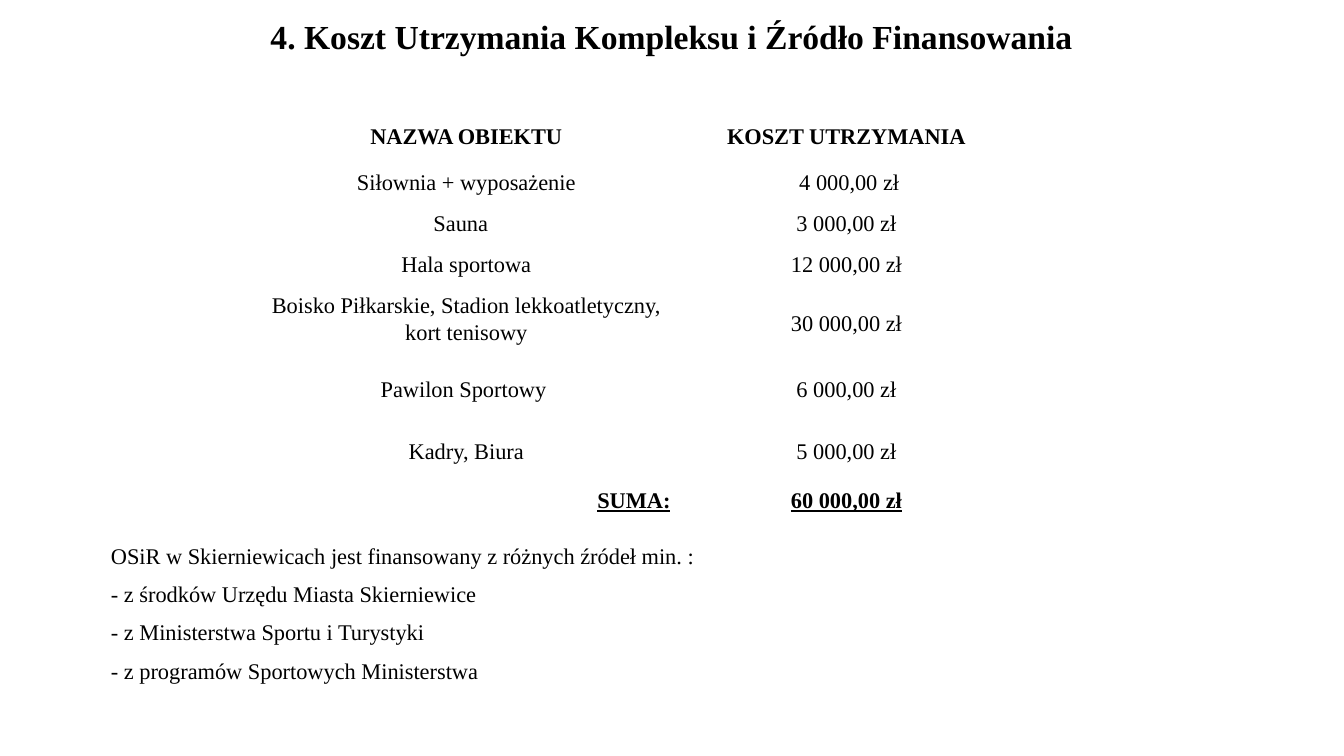
from lxml import etree
from pptx import Presentation
from pptx.dml import color
from pptx.enum import text
from pptx.oxml import ns
from pptx.util import Inches, Pt

FONT = "Times New Roman"
BLACK, WHITE = "000000", "FFFFFF"
ALIGN = text.PP_ALIGN
TOP, MIDDLE = text.MSO_ANCHOR.TOP, text.MSO_ANCHOR.MIDDLE

TITLE = "4. Koszt Utrzymania Kompleksu i Źródło Finansowania"
# name, cost, row height, name anchor, cost anchor
COSTS = [
    ("NAZWA OBIEKTU", "KOSZT UTRZYMANIA", 0.45, TOP, TOP),
    ("Siłownia + wyposażenie", " 4 000,00 zł", 0.41, TOP, TOP),
    ("Sauna  ", "3 000,00 zł", 0.41, TOP, TOP),
    ("Hala sportowa", "12 000,00 zł", 0.41, TOP, TOP),
    ("Boisko Piłkarskie, Stadion lekkoatletyczny, kort tenisowy",
     "30 000,00 zł", 0.71, TOP, MIDDLE),
    ("Pawilon Sportowy ", "6 000,00 zł", 0.61, MIDDLE, MIDDLE),
    ("Kadry, Biura", "5 000,00 zł", 0.61, MIDDLE, MIDDLE),
    ("SUMA:", "60 000,00 zł", 0.41, TOP, TOP),
]
WIDTHS = [4.25, 3.29]
SOURCES = [
    "OSiR w Skierniewicach jest finansowany z różnych źródeł min. :",
    "- z środków Urzędu Miasta Skierniewice",
    "- z Ministerstwa Sportu i Turystyki",
    "- z programów Sportowych Ministerstwa",
]


def rgb(value):
    return color.RGBColor.from_string(value)


def add_run(para, words, size, bold=False, line=False):
    run = para.add_run()
    run.text = words
    font = run.font
    font.name, font.size, font.bold = FONT, Pt(size), bold
    font.underline = line
    font.color.rgb = rgb(BLACK)


def place(shape, left, top, width, height):
    """Move a placeholder and return its top-anchored text frame."""
    shape.left, shape.top = Inches(left), Inches(top)
    shape.width, shape.height = Inches(width), Inches(height)
    frame = shape.text_frame
    frame.word_wrap = True
    frame.auto_size = text.MSO_AUTO_SIZE.NONE
    frame.vertical_anchor = TOP
    return frame


def add_title(slide):
    para = place(slide.shapes.title, 1, 0.11, 11.32, 1.06).paragraphs[0]
    para.alignment = ALIGN.CENTER
    add_run(para, TITLE, 24, bold=True)


def add_list(slide):
    frame = place(slide.placeholders[1], 1, 5.36, 9.78, 1.8)
    for i, words in enumerate(SOURCES):
        para = frame.add_paragraph() if i else frame.paragraphs[0]
        para.line_spacing, para.space_before = 0.9, Pt(10)
        props = para._p.get_or_add_pPr()
        props.set("marL", "0")
        props.set("indent", "0")
        etree.SubElement(props, ns.qn("a:buNone"))
        add_run(para, words, 16)


def set_edges(cell, top, bottom):
    """Draw white borders; top and bottom are widths in points."""
    props = cell._tc.get_or_add_tcPr()
    edges = {"lnL": 1, "lnR": 1, "lnT": top, "lnB": bottom}
    for tag, width in edges.items():
        edge = etree.SubElement(props, ns.qn("a:" + tag), w=str(Pt(width)))
        fill = etree.SubElement(edge, ns.qn("a:solidFill"))
        etree.SubElement(fill, ns.qn("a:srgbClr"), val=WHITE)


def add_costs(slide):
    high = sum(row[2] for row in COSTS)
    table = slide.shapes.add_table(
        len(COSTS), len(WIDTHS), Inches(2.5), Inches(1.17),
        Inches(sum(WIDTHS)), Inches(high)).table
    table.first_row = table.horz_banding = False
    for col, width in zip(table.columns, WIDTHS):
        col.width = Inches(width)
    last = len(COSTS) - 1
    for r, (name, cost, height, *anchors) in enumerate(COSTS):
        table.rows[r].height = Inches(height)
        for c, words in enumerate((name, cost)):
            cell = table.cell(r, c)
            cell.vertical_anchor = anchors[c]
            set_edges(cell, 3 if r == 1 else 1, 3 if r == 0 else 1)
            cell.fill.background()
            para = cell.text_frame.paragraphs[0]
            total = r == last
            para.alignment = ALIGN.RIGHT if total and c == 0 else ALIGN.CENTER
            para.line_spacing, para.space_after = 1.07, Pt(8)
            add_run(para, words, 16, bold=r in (0, last), line=total)


def main():
    deck = Presentation()
    deck.slide_width, deck.slide_height = Inches(13.33), Inches(7.5)
    slide = deck.slides.add_slide(deck.slide_layouts[1])
    slide.background.fill.solid()
    slide.background.fill.fore_color.rgb = rgb(WHITE)
    add_title(slide)
    add_costs(slide)
    add_list(slide)
    deck.save("out.pptx")


if __name__ == "__main__":
    main()
